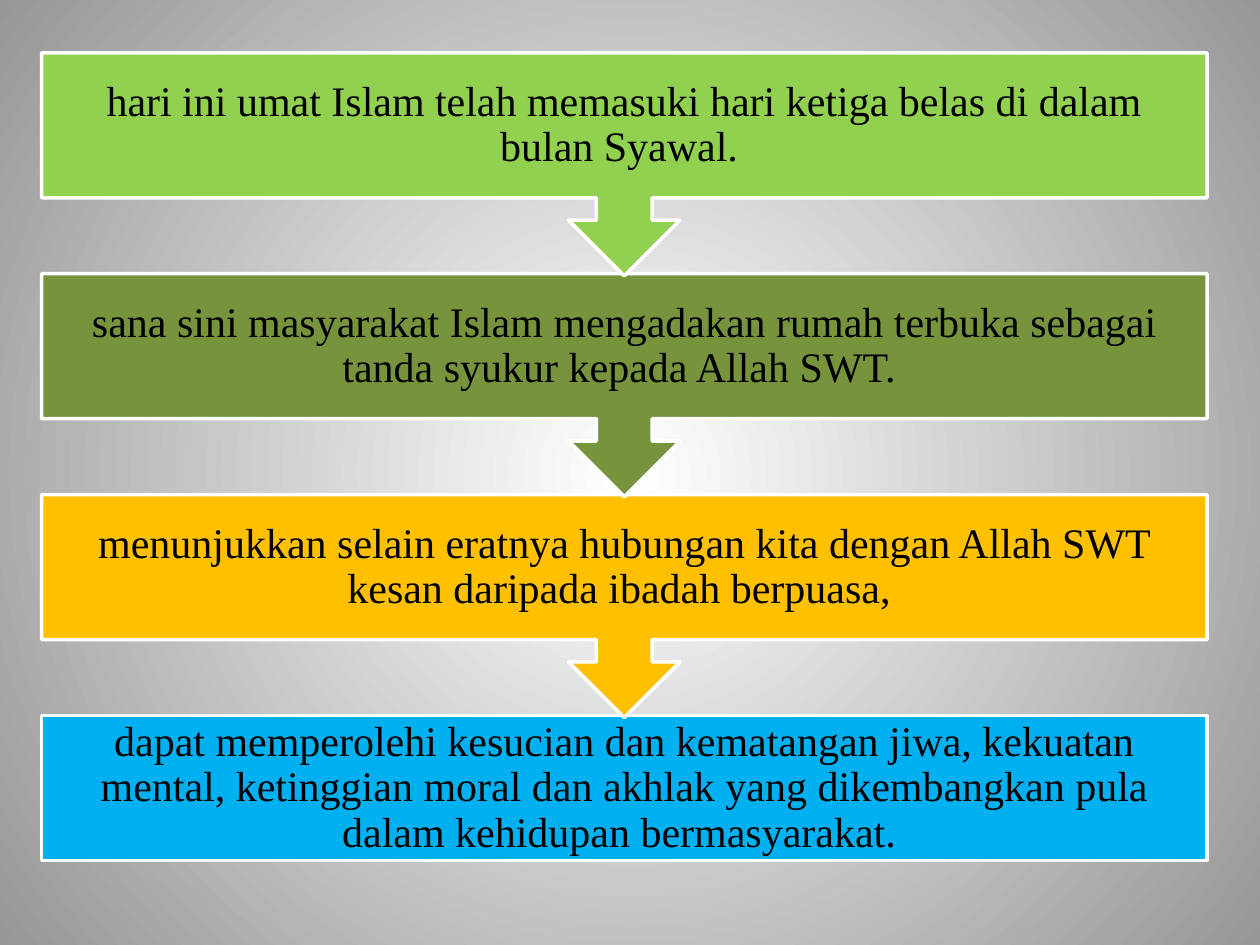
import pptx
import pptx.dml.color
import pptx.enum.shapes
import pptx.enum.text
import pptx.oxml
import pptx.oxml.ns
import pptx.util

Inches, Pt = pptx.util.Inches, pptx.util.Pt
SHAPE = pptx.enum.shapes.MSO_SHAPE

# Content: steps from top to bottom (the trailing space takes part in centring)
STEPS = [
    ("hari ini umat Islam telah memasuki hari ketiga belas di dalam bulan Syawal. ", "92D050"),
    ("sana sini masyarakat Islam mengadakan rumah terbuka sebagai tanda syukur kepada Allah SWT. ", "77933C"),
    ("menunjukkan selain eratnya hubungan kita dengan Allah SWT kesan daripada ibadah berpuasa, ", "FFC000"),
    ("dapat memperolehi kesucian dan kematangan jiwa, kekuatan mental, ketinggian moral dan akhlak "
     "yang dikembangkan pula dalam kehidupan bermasyarakat. ", "00B0F0"),
]
BACKGROUND = ["FFFFFF", "979797"]  # centre, edge

# Layout in inches
LEFT, TOP, WIDTH = 0.33, 0.42, 9.25
PITCH = 1.753
BOX_H, CALLOUT_H = 1.15, 1.77
INSET = 0.19


def rgb(color):
    return pptx.dml.color.RGBColor.from_string(color)


def paint_background(s):
    fill = s.background.fill
    fill.gradient()
    for stop, color in zip(fill.gradient_stops, BACKGROUND):
        stop.color.rgb = rgb(color)
    # Turn the linear gradient into a circular one
    lin = s.element.find(".//" + pptx.oxml.ns.qn("a:lin"))
    lin.getparent().replace(lin, pptx.oxml.parse_xml(
        f'<a:path {pptx.oxml.ns.nsdecls("a")} path="circle">'
        '<a:fillToRect l="50000" t="50000" r="50000" b="50000"/></a:path>'))


def add_step(s, row, text, color):
    last = row == len(STEPS) - 1
    kind, height = (SHAPE.RECTANGLE, BOX_H) if last else (SHAPE.DOWN_ARROW_CALLOUT, CALLOUT_H)
    sp = s.shapes.add_shape(kind, Inches(LEFT), Inches(TOP + row * PITCH), Inches(WIDTH), Inches(height))
    sp.shadow.inherit = False
    sp.fill.solid()
    sp.fill.fore_color.rgb = rgb(color)
    sp.line.color.rgb = rgb("FFFFFF")
    sp.line.width = Pt(2)

    tf = sp.text_frame
    tf.word_wrap = True
    tf.vertical_anchor = pptx.enum.text.MSO_ANCHOR.MIDDLE
    tf.margin_left = tf.margin_right = tf.margin_top = tf.margin_bottom = Inches(INSET)
    p = tf.paragraphs[0]
    p.text = text
    p.alignment = pptx.enum.text.PP_ALIGN.CENTER
    p.line_spacing = 0.9
    p.font.name = "Times New Roman"
    p.font.size = Pt(24)
    p.font.color.rgb = rgb("000000")


def main():
    prs = pptx.Presentation()
    prs.slide_width, prs.slide_height = Inches(10), Inches(7.5)
    s = prs.slides.add_slide(prs.slide_layouts[6])
    paint_background(s)
    # Bottom step first, so each arrow tip lies over the box below it
    for row, (text, color) in reversed(list(enumerate(STEPS))):
        add_step(s, row, text, color)
    prs.save("out.pptx")


if __name__ == "__main__":
    main()
